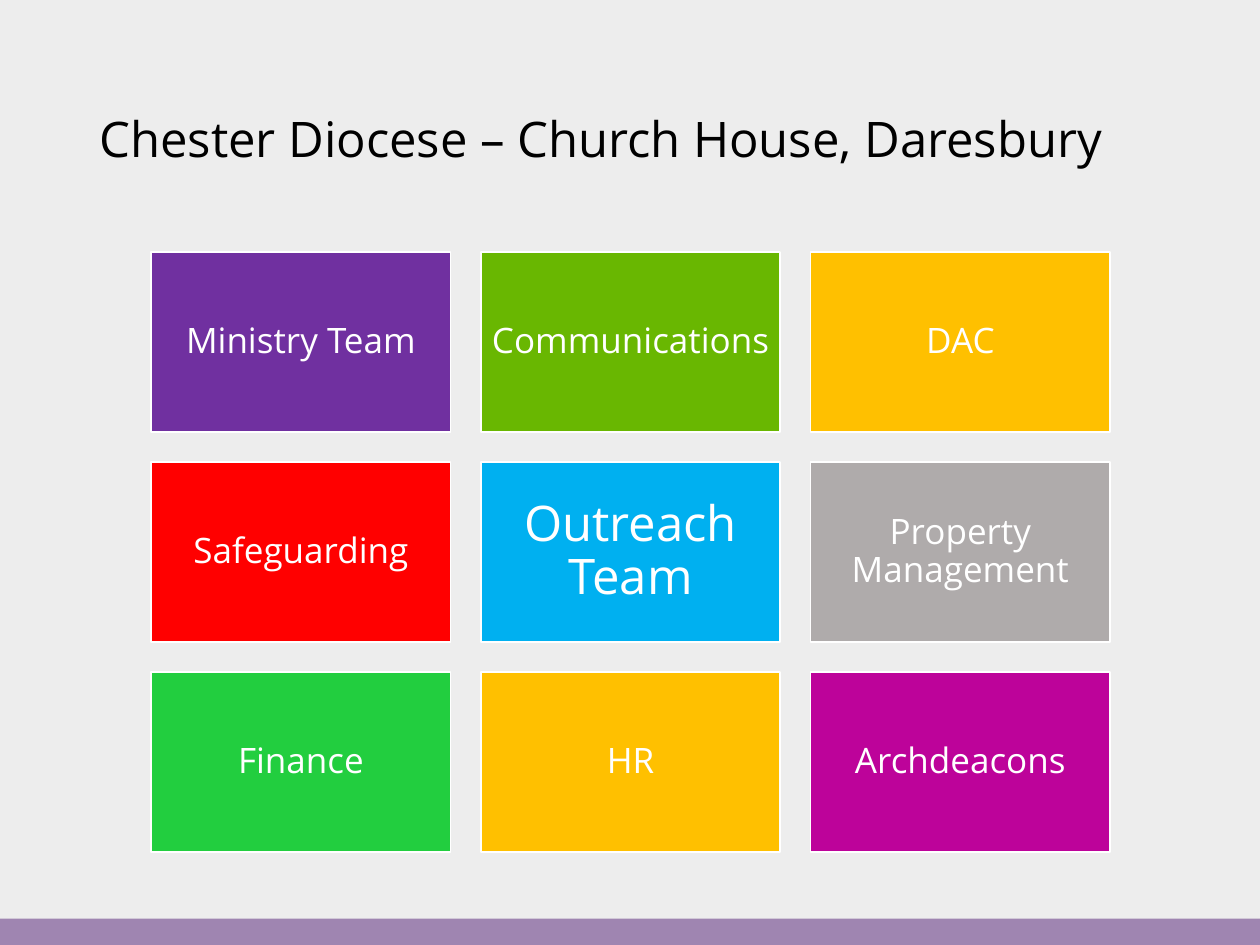
import pptx
import pptx.dml.color
import pptx.enum.shapes
import pptx.enum.text
import pptx.util
from pptx.util import Inches

FONT = "Open Sans"
WHITE = "FFFFFF"
COLUMNS = 3
GAP = 0.24
TEAMS = [
    ("Ministry Team", "7030A0", 20),
    ("Communications", "69B701", 20),
    ("DAC", "FFC000", 20),
    ("Safeguarding", "FF0000", 20),
    ("Outreach Team", "00B0F0", 28),
    ("Property Management", "AFABAB", 20),
    ("Finance", "22CE3F", 20),
    ("HR", "FFC000", 20),
    ("Archdeacons", "BD039A", 20),
]


def rgb(value):
    return pptx.dml.color.RGBColor.from_string(value)


def set_text(sp, text, size, color, align, inset_x, inset_y):
    tf = sp.text_frame
    tf.word_wrap = True
    tf.vertical_anchor = pptx.enum.text.MSO_ANCHOR.MIDDLE
    tf.margin_left = tf.margin_right = Inches(inset_x)
    tf.margin_top = tf.margin_bottom = Inches(inset_y)
    p = tf.paragraphs[0]
    p.text = text
    p.alignment = align
    p.line_spacing = 0.9
    p.font.name = FONT
    p.font.size = pptx.util.Pt(size)
    p.font.color.rgb = rgb(color)


def add_rect(slide, left, top, width, height, fill):
    sp = slide.shapes.add_shape(
        pptx.enum.shapes.MSO_SHAPE.RECTANGLE,
        Inches(left), Inches(top), Inches(width), Inches(height))
    sp.shadow.inherit = False
    sp.fill.solid()
    sp.fill.fore_color.rgb = rgb(fill)
    sp.line.fill.background()
    return sp


def add_title(slide, left, top, width, height):
    sp = slide.shapes.add_textbox(
        Inches(left), Inches(top), Inches(width), Inches(height))
    set_text(sp, "Chester Diocese – Church House, Daresbury", 28, "000000",
             pptx.enum.text.PP_ALIGN.LEFT, 0.1, 0.05)


def add_team_grid(slide, left, top, width, height):
    rows = len(TEAMS) // COLUMNS
    tile_w = (width - GAP * (COLUMNS - 1)) / COLUMNS
    tile_h = (height - GAP * (rows - 1)) / rows
    for i, (name, fill, size) in enumerate(TEAMS):
        row, col = divmod(i, COLUMNS)
        sp = add_rect(slide, left + col * (tile_w + GAP),
                      top + row * (tile_h + GAP), tile_w, tile_h, fill)
        sp.line.color.rgb = rgb(WHITE)
        sp.line.width = pptx.util.Pt(1)
        inset = 0.12 if size > 20 else 0.08
        set_text(sp, name, size, WHITE, pptx.enum.text.PP_ALIGN.CENTER,
                 inset, inset)


def main():
    prs = pptx.Presentation()
    prs.slide_width = Inches(10)
    prs.slide_height = Inches(7.5)
    slide = prs.slides.add_slide(prs.slide_layouts[6])
    slide.background.fill.solid()
    slide.background.fill.fore_color.rgb = rgb("EDEDED")
    add_rect(slide, 0, 7.29, 10, 0.21, "9F85B1")
    add_title(slide, 0.69, 0.4, 8.62, 1.45)
    add_team_grid(slide, 1.2, 2, 7.61, 4.76)
    prs.save("out.pptx")


if __name__ == "__main__":
    main()
